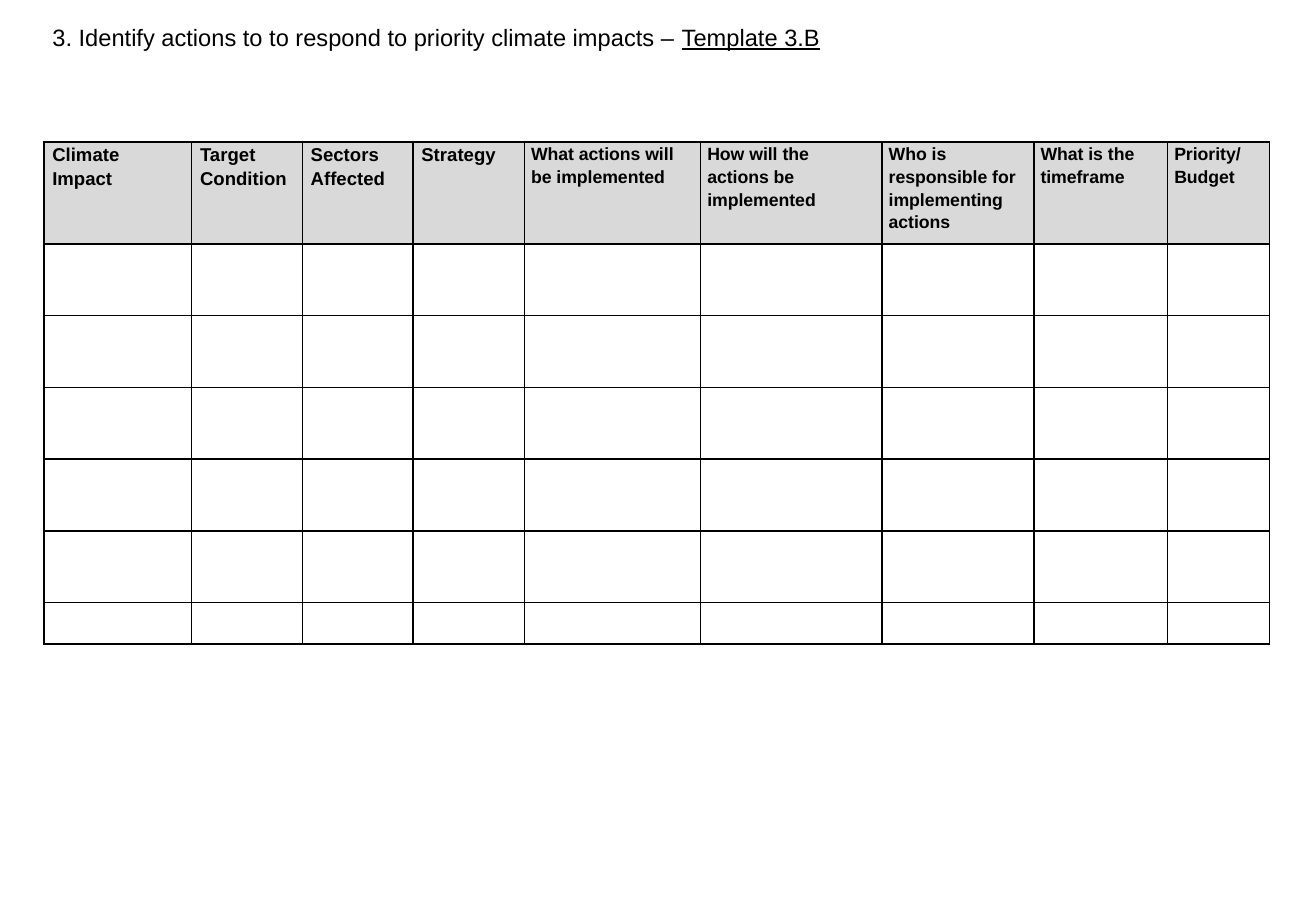
from dataclasses import dataclass

import lxml.etree
import pptx
import pptx.dml.color
import pptx.enum.text
import pptx.oxml.ns
import pptx.slide
import pptx.table
import pptx.util

Pt = pptx.util.Pt
BLACK = pptx.dml.color.RGBColor(0x00, 0x00, 0x00)
HEADER_GREY = pptx.dml.color.RGBColor(0xD9, 0xD9, 0xD9)

TITLE_FONT = {"name": "Arial", "size": Pt(14)}
BORDER_WIDTH = Pt(1)
HEADER_HEIGHT, BODY_HEIGHT, LAST_HEIGHT = 60.5, 42.5, 24.5
BODY_ROWS = 5


@dataclass(frozen=True)
class Column:
    heading: str
    width: float
    size: float = 10.5
    inset: float = 4


COLUMNS = [
    Column("Climate Impact", 87.6, 11, 5),
    Column("Target Condition", 65.6, 11, 5),
    Column("Sectors Affected", 65.6, 11, 5),
    Column("Strategy", 66, 11, 5),
    Column("What actions will be implemented", 104.5),
    Column("How will the actions be implemented", 107.5),
    Column("Who is responsible for implementing actions", 90),
    Column("What is the timeframe", 79.3),
    Column("Priority/ Budget", 60.4),
]


def apply(target: object, values: dict) -> None:
    for name, value in values.items():
        setattr(target, name, value)


def add_run(p, text: str, values: dict) -> None:
    r = p.add_run()
    r.text = text
    apply(r.font, values)
    r.font.color.rgb = BLACK


def add_borders(cell: pptx.table._Cell) -> None:
    tc_pr = cell._tc.get_or_add_tcPr()
    qn = pptx.oxml.ns.qn
    for side in ("lnL", "lnR", "lnT", "lnB"):
        ln = lxml.etree.SubElement(tc_pr, qn(f"a:{side}"), w=str(BORDER_WIDTH))
        fill = lxml.etree.SubElement(ln, qn("a:solidFill"))
        lxml.etree.SubElement(fill, qn("a:srgbClr"), val=str(BLACK))


def add_title(s: pptx.slide.Slide) -> None:
    tf = s.shapes.add_textbox(Pt(24), Pt(10), Pt(742), Pt(24.5)).text_frame
    tf.word_wrap = True
    p = tf.paragraphs[0]
    add_run(p, "3. Identify actions to to respond to priority climate impacts – ", TITLE_FONT)
    add_run(p, "Template 3.B", TITLE_FONT | {"underline": True})


def add_heading(cell: pptx.table._Cell, column: Column) -> None:
    cell.fill.solid()
    cell.fill.fore_color.rgb = HEADER_GREY
    p = cell.text_frame.paragraphs[0]
    apply(p, {"line_spacing": 1.15, "space_after": Pt(10)})
    add_run(p, column.heading, {"name": "Arial", "size": Pt(column.size), "bold": True})


def add_action_table(s: pptx.slide.Slide) -> None:
    heights = [HEADER_HEIGHT] + [BODY_HEIGHT] * BODY_ROWS + [LAST_HEIGHT]
    width = sum(column.width for column in COLUMNS)
    table = s.shapes.add_table(
        len(heights), len(COLUMNS), Pt(26), Pt(84.2), Pt(width), Pt(sum(heights))
    ).table
    apply(table, {"first_row": False, "horz_banding": False})
    for row, height in zip(table.rows, heights):
        row.height = Pt(height)
    for i, column in enumerate(COLUMNS):
        table.columns[i].width = Pt(column.width)
        for j in range(len(heights)):
            cell = table.cell(j, i)
            apply(cell, {
                "margin_left": Pt(column.inset), "margin_right": Pt(column.inset),
                "margin_top": 0, "margin_bottom": 0,
            })
            add_borders(cell)
            if j == 0:
                add_heading(cell, column)
            else:
                cell.fill.background()


def main() -> None:
    prs = pptx.Presentation()
    apply(prs, {"slide_width": Pt(780), "slide_height": Pt(540)})
    s = prs.slides.add_slide(prs.slide_layouts[6])

    # Title line
    add_title(s)

    # Table of planned actions
    add_action_table(s)

    prs.save("out.pptx")


if __name__ == "__main__":
    main()
